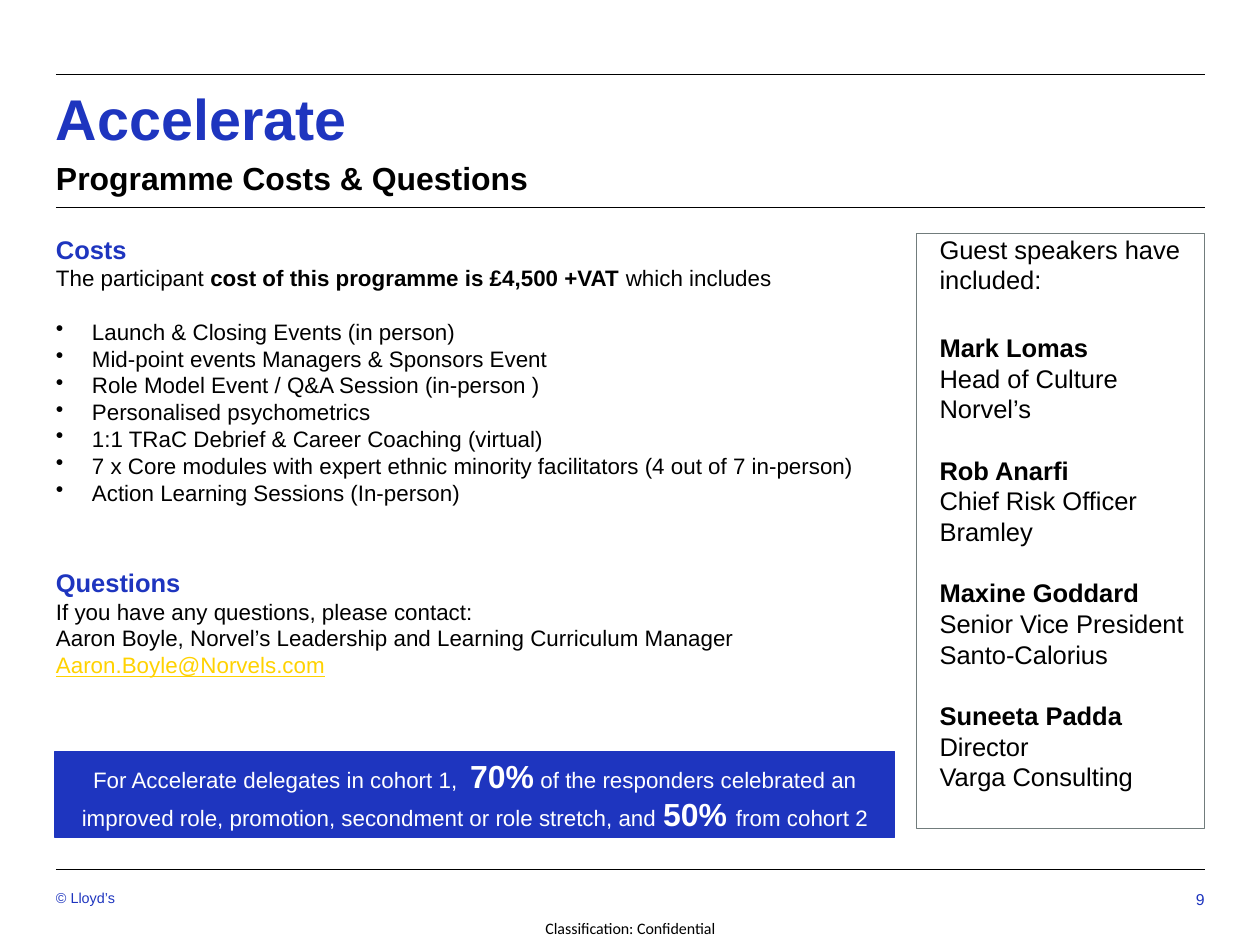
"""Build the programme costs and questions slide."""
import pptx
import pptx.dml.color
import pptx.enum.shapes
import pptx.enum.text
import pptx.oxml.ns
import pptx.util
from lxml import etree

PX = 7958
BLUE, BLACK, WHITE, GREY, YELLOW = "1E35BF", "000000", "FFFFFF", "717C7C", "FFD200"
ALIGN = pptx.enum.text.PP_ALIGN
ANCHOR = pptx.enum.text.MSO_ANCHOR
LEFT, RIGHT = 56, 1205
RULES = [74, 208, 870]
BENEFITS = [
    "Launch & Closing Events (in person)",
    "Mid-point events Managers & Sponsors Event",
    "Role Model Event / Q&A Session (in-person )",
    "Personalised psychometrics",
    "1:1 TRaC Debrief & Career Coaching (virtual)",
    "7 x Core modules with expert ethnic minority facilitators (4 out of 7 in-person)",
    "Action Learning Sessions (In-person)",
]
SPEAKERS = [
    ("Mark Lomas", "Head of Culture", "Norvel’s"),
    ("Rob Anarfi", "Chief Risk Officer", "Bramley"),
    ("Maxine Goddard", "Senior Vice President", "Santo-Calorius"),
    ("Suneeta Padda", "Director", "Varga Consulting"),
]


def px(n):
    """Turn pixels into EMU."""
    return pptx.util.Emu(n * PX)


def rgb(value):
    """Turn a hex string into a colour."""
    return pptx.dml.color.RGBColor.from_string(value)


def add_rule(s, y):
    """Draw a thin horizontal rule across the slide."""
    sp = s.shapes.add_connector(
        pptx.enum.shapes.MSO_CONNECTOR.STRAIGHT, px(LEFT), px(y), px(RIGHT), px(y))
    sp.line.color.rgb = rgb(BLACK)
    sp.line.width = pptx.util.Pt(0.5)
    etree.SubElement(sp._element.spPr, pptx.oxml.ns.qn("a:effectLst"))


def set_frame(sp, anchor, inset):
    """Set wrapping, anchor and insets, and return the text frame."""
    tf = sp.text_frame
    tf.word_wrap = True
    tf.vertical_anchor = anchor
    tf.margin_left = tf.margin_right = px(inset)
    tf.margin_top = tf.margin_bottom = 0
    return tf


def add_text(s, x, y, w, h, anchor=ANCHOR.TOP):
    """Add a text box without insets and return its text frame."""
    return set_frame(s.shapes.add_textbox(px(x), px(y), px(w), px(h)), anchor, 0)


def add_panel(s, x, y, w, h, fill, line, width, anchor, inset):
    """Add an outlined rectangle and return its text frame."""
    sp = s.shapes.add_shape(
        pptx.enum.shapes.MSO_SHAPE.RECTANGLE, px(x), px(y), px(w), px(h))
    sp.shadow.inherit = False
    if fill:
        sp.fill.solid()
        sp.fill.fore_color.rgb = rgb(fill)
    else:
        sp.fill.background()
    sp.line.color.rgb = rgb(line)
    sp.line.width = pptx.util.Pt(width)
    return set_frame(sp, anchor, inset)


def add_para(tf, before=0, align=ALIGN.LEFT, bullet=False):
    """Return the next paragraph of a frame, reusing the empty first one."""
    first = tf.paragraphs[0]
    p = tf.add_paragraph() if first.runs else first
    p.alignment = align
    p.space_before = pptx.util.Pt(before)
    if bullet:
        pPr = p._p.get_or_add_pPr()
        pPr.set("marL", str(px(36)))
        pPr.set("indent", str(-px(36)))
        etree.SubElement(pPr, pptx.oxml.ns.qn("a:buChar")).set("char", "•")
    return p


def add_run(p, text, size, color=BLACK, bold=False, font="Arial", underline=False):
    """Add a formatted run to a paragraph."""
    r = p.add_run()
    r.text = text
    r.font.size = pptx.util.Pt(size)
    r.font.name = font
    r.font.bold = bold
    r.font.underline = underline
    r.font.color.rgb = rgb(color)


def add_header(s):
    """Add the title and the subtitle."""
    add_run(add_para(add_text(s, LEFT, 83, 1149, 68)), "Accelerate", 36, BLUE, True)
    add_run(add_para(add_text(s, LEFT, 159, 1149, 40)),
            "Programme Costs & Questions", 20, BLACK, True)


def add_body(s):
    """Add the costs and the questions."""
    tf = add_text(s, LEFT, 234, 855, 450)
    add_run(add_para(tf), "Costs", 16, BLUE, True)
    p = add_para(tf)
    add_run(p, "The participant ", 14)
    add_run(p, "cost of this programme is £4,500 +VAT ", 14, bold=True)
    add_run(p, "which includes", 14)
    for i, benefit in enumerate(BENEFITS):
        add_run(add_para(tf, 0 if i else 16.8, bullet=True), benefit, 14)
    add_run(add_para(tf, 38.6), "Questions", 16, BLUE, True)
    add_run(add_para(tf), "If you have any questions, please contact:", 14)
    add_run(add_para(tf),
            "Aaron Boyle, Norvel’s Leadership and Learning Curriculum Manager", 14)
    add_run(add_para(tf), "Aaron.Boyle@Norvels.com", 14, YELLOW, underline=True)


def add_speakers(s):
    """Add the panel of guest speakers."""
    tf = add_panel(s, 917, 234, 288, 595, None, GREY, 0.75, ANCHOR.TOP, 0)
    tf.margin_left = px(23)
    add_run(add_para(tf), "Guest speakers have included:", 16)
    for i, (name, role, firm) in enumerate(SPEAKERS):
        add_run(add_para(tf, 19.3 if i else 23.3), name, 16, bold=True)
        add_run(add_para(tf), role, 16)
        add_run(add_para(tf), firm, 16)


def add_banner(s):
    """Add the banner with the cohort results."""
    tf = add_panel(s, 55, 752, 840, 86, BLUE, BLUE, 1, ANCHOR.MIDDLE, 11)
    p = add_para(tf, align=ALIGN.CENTER)
    add_run(p, "For Accelerate delegates in cohort 1,  ", 14, WHITE)
    add_run(p, "70%", 20, WHITE, True)
    add_run(p, " of the responders celebrated an improved role, promotion, "
               "secondment or role stretch, and ", 14, WHITE)
    add_run(p, "50% ", 20, WHITE, True)
    add_run(p, "from cohort 2", 14, WHITE)


def add_footer(s):
    """Add the copyright line, the page number and the classification."""
    tf = add_text(s, LEFT, 884, 425, 29, ANCHOR.MIDDLE)
    add_run(add_para(tf), "© Lloyd’s", 9, BLUE)
    tf = add_text(s, 921, 882, 284, 35, ANCHOR.MIDDLE)
    add_run(add_para(tf, align=ALIGN.RIGHT), "9", 9.9, BLUE)
    tf = add_text(s, 526, 912, 209, 34, ANCHOR.MIDDLE)
    add_run(add_para(tf, align=ALIGN.CENTER),
            "Classification: Confidential", 10, font="Calibri")


def main():
    """Build and save the slide."""
    prs = pptx.Presentation()
    prs.slide_width = pptx.util.Inches(10.97)
    prs.slide_height = pptx.util.Inches(8.23)
    s = prs.slides.add_slide(prs.slide_layouts[6])
    for y in RULES:
        add_rule(s, y)
    add_header(s)
    add_body(s)
    add_speakers(s)
    add_banner(s)
    add_footer(s)
    prs.save("out.pptx")


if __name__ == "__main__":
    main()
